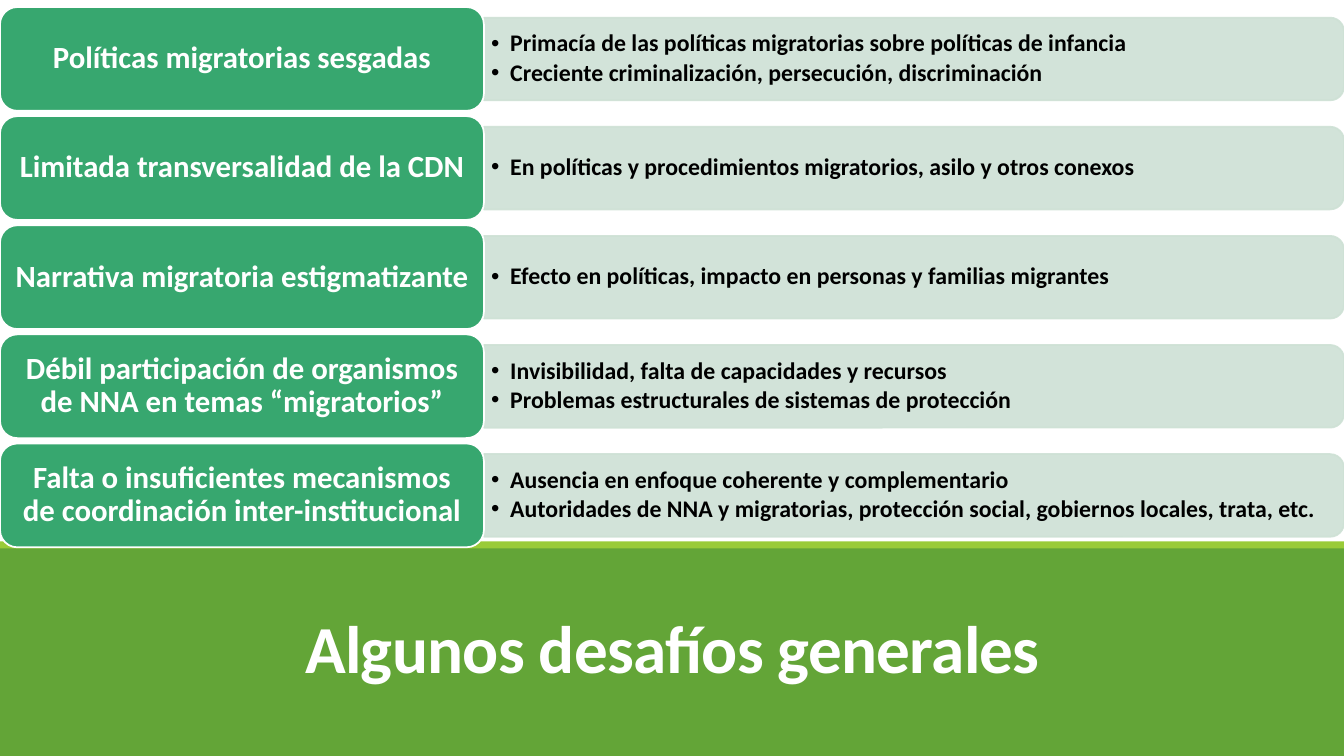
from lxml import etree
from pptx import Presentation
from pptx.dml.color import RGBColor
from pptx.enum.shapes import MSO_SHAPE
from pptx.enum.text import MSO_ANCHOR, MSO_AUTO_SIZE, PP_ALIGN
from pptx.oxml.ns import qn
from pptx.util import Inches, Pt

RECT = MSO_SHAPE.RECTANGLE
ROUNDED = MSO_SHAPE.ROUNDED_RECTANGLE
ROUND_TOP = MSO_SHAPE.ROUND_2_SAME_RECTANGLE
MIDDLE, BOTTOM = MSO_ANCHOR.MIDDLE, MSO_ANCHOR.BOTTOM
LEFT, CENTER = PP_ALIGN.LEFT, PP_ALIGN.CENTER
NO_AUTOFIT = MSO_AUTO_SIZE.NONE

WIDTH, HEIGHT = 13.33, 7.5
LABEL_W, LABEL_H, BAR_H = 4.8, 1.03, 0.82
FIRST_TOP, LAST_TOP = 0.07, 4.4

CHALLENGES = [
    ("Políticas migratorias sesgadas",
     ["Primacía de las políticas migratorias sobre políticas de infancia",
      "Creciente criminalización, persecución, discriminación"]),
    ("Limitada transversalidad de la CDN",
     ["En políticas y procedimientos migratorios, asilo y otros conexos"]),
    ("Narrativa migratoria estigmatizante",
     ["Efecto en políticas, impacto en personas y familias migrantes"]),
    ("Débil participación de organismos de NNA en temas “migratorios”",
     ["Invisibilidad, falta de capacidades y recursos",
      "Problemas estructurales de sistemas de protección"]),
    ("Falta o insuficientes mecanismos de coordinación inter-institucional",
     ["Ausencia en enfoque coherente y complementario",
      "Autoridades de NNA y migratorias, protección social, "
      "gobiernos locales, trata, etc."]),
]


def color(value):
    return RGBColor.from_string(value)


class Slide:
    font = "Calibri"
    green, lime, teal, pale = "63A537", "99CB38", "37A76F", "CEE1D5"
    white, black = "FFFFFF", "000000"

    def __init__(self, prs):
        self.s = prs.slides.add_slide(prs.slide_layouts[5])

    def shape(self, kind, x, y, w, h, fill, line=None):
        sp = self.s.shapes.add_shape(kind, Inches(x), Inches(y), Inches(w), Inches(h))
        sp.shadow.inherit = False
        sp.fill.solid()
        sp.fill.fore_color.rgb = color(fill)
        if line:
            sp.line.color.rgb = color(line)
            sp.line.width = Pt(1.25)
        else:
            sp.line.fill.background()
        return sp

    def frame(self, tf, anchor, side, edge):
        tf.word_wrap = True
        tf.auto_size = NO_AUTOFIT
        tf.vertical_anchor = anchor
        tf.margin_left = tf.margin_right = Inches(side)
        tf.margin_top = tf.margin_bottom = Inches(edge)
        return tf

    def run(self, p, text, size, ink, align, spacing=0.9):
        p.alignment = align
        p.line_spacing = spacing
        r = p.add_run()
        r.text = text
        r.font.name = self.font
        r.font.size = Pt(size)
        r.font.bold = True
        r.font.color.rgb = color(ink)
        return r

    def title(self, text, x, y, w, h):
        sp = self.s.shapes.title
        sp.left, sp.top, sp.width, sp.height = Inches(x), Inches(y), Inches(w), Inches(h)
        self.s.shapes.element.append(sp.element)
        tf = self.frame(sp.text_frame, BOTTOM, 0.1, 0.05)
        self.run(tf.paragraphs[0], text, 48, self.white, CENTER, 0.85)
        for rPr in sp.element.iter(qn("a:rPr")):
            rPr.set("spc", "-50")

    def bar(self, x, y, w, h):
        sp = self.shape(ROUND_TOP, x + (w - h) / 2, y + (h - w) / 2, h, w,
                        self.pale, self.pale)
        sp.rotation = 90
        for clr in sp.element.spPr.iter(qn("a:srgbClr")):
            etree.SubElement(clr, qn("a:alpha")).set("val", "90000")

    def bullets(self, items, x, y, w, h):
        sp = self.s.shapes.add_textbox(Inches(x), Inches(y), Inches(w), Inches(h))
        tf = self.frame(sp.text_frame, MIDDLE, 0.07, 0.04)
        for i, item in enumerate(items):
            p = tf.add_paragraph() if i else tf.paragraphs[0]
            p.level = 1
            p.space_after = Pt(2.55)
            self.run(p, item, 17, self.black, LEFT)
        for pPr in sp.element.iter(qn("a:pPr")):
            pPr.set("marL", str(Inches(0.19)))
            pPr.set("indent", str(Inches(-0.19)))
            etree.SubElement(pPr, qn("a:buFont")).set("typeface", "Arial")
            etree.SubElement(pPr, qn("a:buChar")).set("char", "•")

    def label(self, text, x, y, w, h):
        sp = self.shape(ROUNDED, x, y, w, h, self.teal, self.white)
        tf = self.frame(sp.text_frame, MIDDLE, 0.09, 0.05)
        self.run(tf.paragraphs[0], text, 22, self.white, CENTER)


def main():
    prs = Presentation()
    prs.slide_width, prs.slide_height = Inches(WIDTH), Inches(HEIGHT)
    slide = Slide(prs)
    slide.shape(RECT, 0, 5.42, WIDTH, 2.08, slide.green)
    slide.title("Algunos desafíos generales", 1.17, 5.74, 11, 1.13)
    slide.shape(RECT, 0, 5.37, WIDTH, 0.07, slide.lime)

    pitch = (LAST_TOP - FIRST_TOP) / (len(CHALLENGES) - 1)
    for i, (name, items) in enumerate(CHALLENGES):
        top = FIRST_TOP + i * pitch
        middle = top + LABEL_H / 2
        slide.bar(LABEL_W, middle - BAR_H / 2, WIDTH - LABEL_W, BAR_H)
        slide.bullets(items, LABEL_W, middle - 0.37, 8.49, 0.74)
        slide.label(name, 0, top, LABEL_W, LABEL_H)
    prs.save("out.pptx")


if __name__ == "__main__":
    main()
